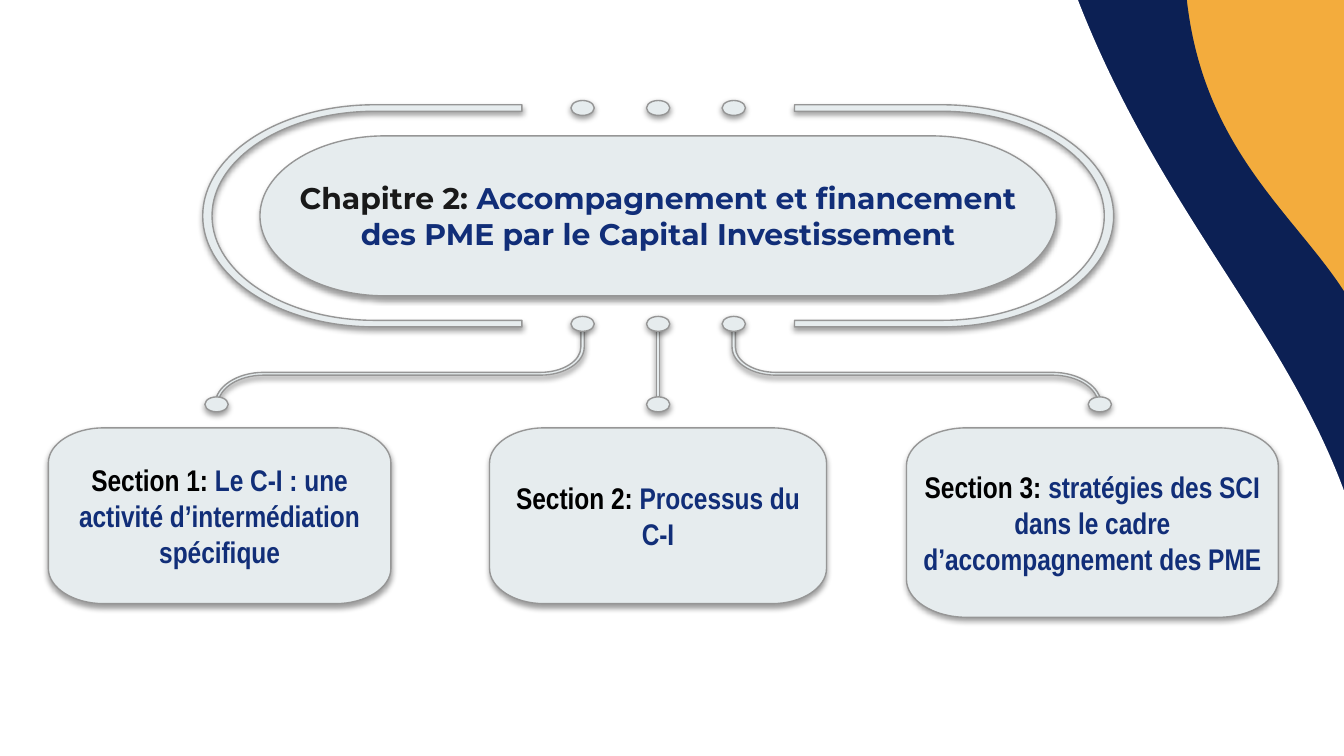
from math import cos, sin, radians

from lxml import etree
from pptx import Presentation
from pptx.dml.color import RGBColor
from pptx.enum import shapes, text
from pptx.oxml.ns import qn
from pptx.util import Pt

COLORS = {"orange": "F3AC3D", "navy": "0C2054", "white": "FFFFFF", "panel": "E6ECEE",
          "edge": "969696", "shadow": "000000", "dark": "191919", "black": "000000",
          "blue": "112E78"}
SHAPE = shapes.MSO_SHAPE

DOT_W, DOT_H = 12.5, 8
AXIS = 352.6            # vertical axis of symmetry of the diagram
CURVE = 0.55            # control length of a Bézier quarter ellipse
TITLE = (139.3, 72.8, 426.6, 85.7)
SECTIONS = [
    ((262.3, 229.2, 180.5, 94.2), "Section 2: ", "Processus du C-I"),
    ((25.9, 229.2, 183.5, 94.2), "Section 1: ", "Le C-I : une activité d’intermédiation spécifique"),
    ((485.6, 229.2, 199.2, 101.5), "Section 3: ",
     "stratégies des SCI dans le cadre d’accompagnement des PME"),
]


def rgb(name):
    return RGBColor.from_string(COLORS[name])


def arc(cx, cy, rx, ry, start, end):
    """Steps along an ellipse in quarter turns, angles clockwise from the right."""
    turn = 90 if end > start else -90
    spokes = [(rx * cos(radians(a)), ry * sin(radians(a)))
              for a in range(start, end + turn, turn)]
    steps = [[(cx + spokes[0][0], cy + spokes[0][1])]]
    for (ax, ay), (bx, by) in zip(spokes, spokes[1:]):
        steps.append([(cx + ax + CURVE * bx, cy + ay + CURVE * by),
                      (cx + bx + CURVE * ax, cy + by + CURVE * ay),
                      (cx + bx, cy + by)])
    return steps


def line(*points):
    return [[point] for point in points]


def mirrored(steps, side, cy=0):
    """Moves steps from the axis outwards, to the left (-1) or right (1)."""
    return [[(AXIS + side * dx, cy + dy) for dx, dy in step] for step in steps]


def style(sp):
    """Pale fill, grey line and soft shadow, shared by the whole diagram."""
    sp.fill.solid()
    sp.fill.fore_color.rgb = rgb("panel")
    sp.line.color.rgb = rgb("edge")
    sp.line.width = Pt(0.75)
    sp.shadow.inherit = False
    effects = sp._element.spPr.find(qn("a:effectLst"))
    shadow = etree.SubElement(effects, qn("a:outerShdw"), blurRad=str(Pt(3.1)),
                              dist=str(Pt(1.6)), dir="5400000", rotWithShape="0")
    color = etree.SubElement(shadow, qn("a:srgbClr"), val=COLORS["shadow"])
    etree.SubElement(color, qn("a:alpha"), val="38000")


def outline(slide, steps):
    """Closed freeform; a step of one point is a line, of three points a curve."""
    steps = [[(Pt(x), Pt(y)) for x, y in step] for step in steps]
    ends = [step[-1] for step in steps]
    builder = slide.shapes.build_freeform(*ends[0])
    builder.add_line_segments(ends[1:], close=True)
    sp = builder.convert_to_shape()
    for segment, step in zip(list(sp._element.iter(qn("a:lnTo"))), steps[1:]):
        if len(step) == 3:
            curve = etree.Element(qn("a:cubicBezTo"))
            for x, y in step:
                etree.SubElement(curve, qn("a:pt"), x=str(x - sp.left), y=str(y - sp.top))
            segment.getparent().replace(segment, curve)
    style(sp)
    return sp


def dot(slide, cx, cy):
    style(slide.shapes.add_shape(SHAPE.OVAL, Pt(cx - DOT_W / 2), Pt(cy - DOT_H / 2),
                                 Pt(DOT_W), Pt(DOT_H)))


def panel(slide, box, corner, runs, font):
    """Box with elliptical corners, sized as shares of its width and height."""
    x, y, w, h = box
    rx, ry = w * corner[0], h * corner[1]
    left, right, top, bottom = x + rx, x + w - rx, y + ry, y + h - ry
    sp = outline(slide, arc(left, top, rx, ry, 180, 270) + arc(right, top, rx, ry, 270, 360)
                 + arc(right, bottom, rx, ry, 0, 90) + arc(left, bottom, rx, ry, 90, 180))
    tf = sp.text_frame
    frame = {"word_wrap": True, "vertical_anchor": text.MSO_ANCHOR.MIDDLE}
    frame.update({f"margin_{side}": Pt(7.2) for side in ("left", "right", "top", "bottom")})
    for key, value in frame.items():
        setattr(tf, key, value)
    p = tf.paragraphs[0]
    p.alignment = text.PP_ALIGN.CENTER
    for words, color in runs:
        r = p.add_run()
        r.text = words
        for key, value in {"name": font, "size": Pt(16), "bold": True}.items():
            setattr(r.font, key, value)
        r.font.color.rgb = rgb(color)


def bracket(slide, side, cy):
    """Half ring around the title; side is -1 for left, 1 for right."""
    ring = (line((73, -59.5)) + arc(152, 0, 92, 59.5, -90, 90)
            + line((73, 59.5), (73, 56)) + arc(152, 0, 87, 56, 90, -90) + line((73, -56)))
    outline(slide, mirrored(ring, side, cy))


def branch(slide, side, top, bottom):
    """Thin pipe from the title dots to a section dot; side 0 is straight."""
    if side == 0:
        left, right = AXIS - 0.9, AXIS + 0.9
        outline(slide, line((left, top), (right, top), (right, bottom), (left, bottom)))
        return
    bend = top + 12.5
    drop = bottom - bend
    pipe = (line((39.6, top)) + arc(63, bend, 23.4, 15, 180, 90)
            + arc(211.3, bottom, 24.4, drop - 15, -90, 0)
            + arc(211.3, bottom, 26, drop - 13.5, 0, -90)
            + arc(63, bend, 21.6, 13.5, 90, 180) + line((41.4, top)))
    outline(slide, mirrored(pipe, side))


def backdrop(slide):
    slide.background.fill.solid()
    slide.background.fill.fore_color.rgb = rgb("orange")
    waves = [((335.5, -98.6, 313.9, 499), 267, "navy"),
             ((-40.3, -197.3, 729.4, 822.2), 264.8, "white")]
    for box, angle, color in waves:
        sp = slide.shapes.add_shape(SHAPE.FLOWCHART_DOCUMENT, *map(Pt, box))
        sp.rotation = angle
        sp.fill.solid()
        sp.fill.fore_color.rgb = rgb(color)
        sp.line.fill.background()
        sp.shadow.inherit = False


def chapter(slide, box):
    x, y, w, h = box
    panel(slide, box, (0.157, 0.5),
          [("Chapitre 2: ", "dark"),
           ("Accompagnement et financement des PME par le Capital Investissement", "blue")],
          "Montserrat")
    middle = y + h / 2
    upper, lower, ends = middle - 57.8, middle + 57.9, middle + 101
    for side in (1, -1):
        bracket(slide, side, middle)
    for side in (-1, 0, 1):
        dot(slide, AXIS + side * 40.5, upper)
    for side in (0, -1, 1):
        branch(slide, side, lower, ends)
        dot(slide, AXIS + side * 236.6, ends)
        dot(slide, AXIS + side * 40.5, lower)


def main():
    prs = Presentation()
    prs.slide_width, prs.slide_height = Pt(720), Pt(405)
    slide = prs.slides.add_slide(prs.slide_layouts[6])
    backdrop(slide)
    chapter(slide, TITLE)
    for box, label, title in SECTIONS:
        panel(slide, box, (0.162, 0.2), [(label, "black"), (title, "blue")], "Arial Narrow")
    prs.save("out.pptx")


if __name__ == "__main__":
    main()
